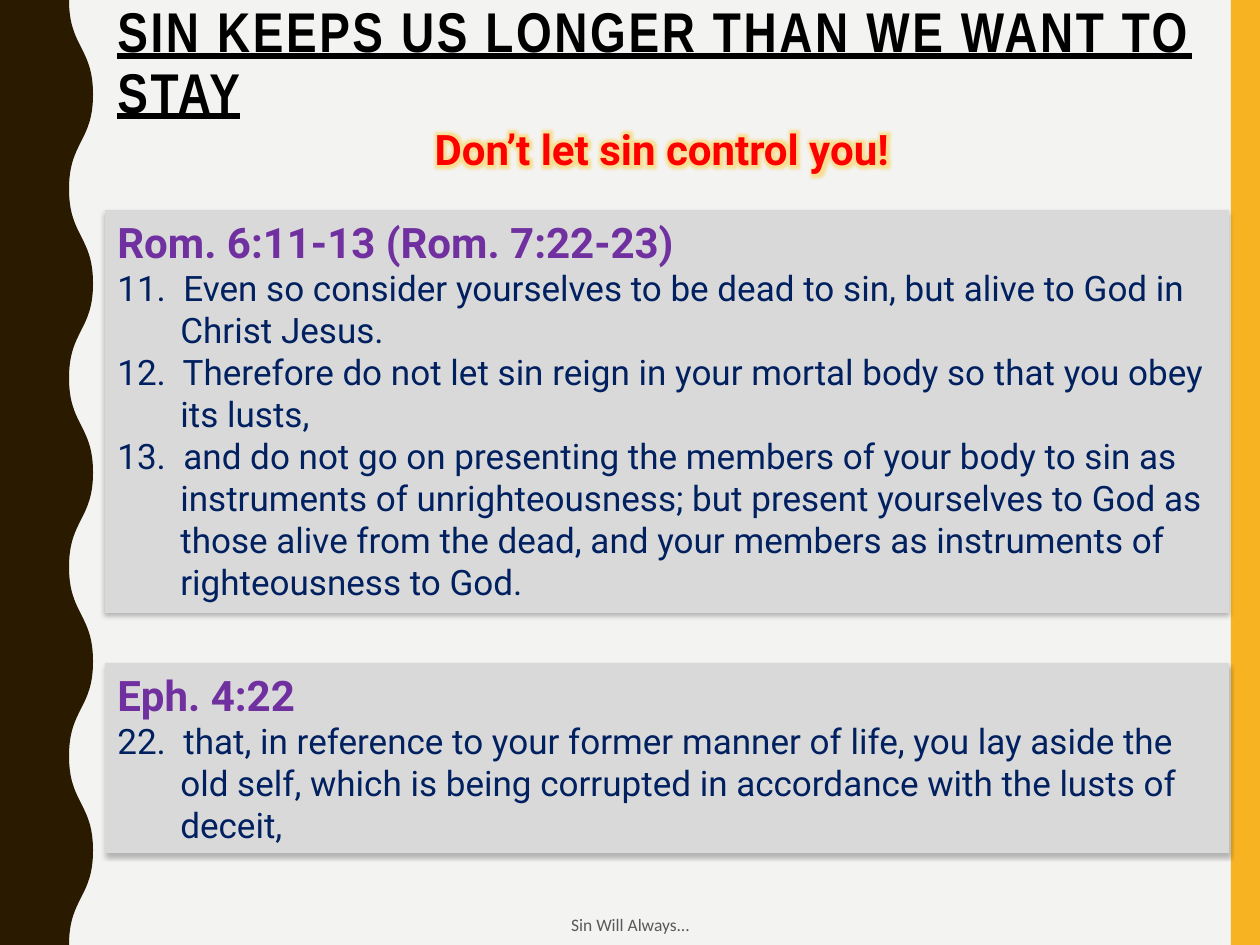
from lxml import etree
from pptx import Presentation
from pptx.dml.color import RGBColor
from pptx.enum.shapes import MSO_SHAPE
from pptx.enum.text import MSO_ANCHOR, MSO_AUTO_SIZE, PP_ALIGN
from pptx.oxml.ns import qn
from pptx.util import Emu, Pt

RECTANGLE = MSO_SHAPE.RECTANGLE
TOP, MIDDLE = MSO_ANCHOR.TOP, MSO_ANCHOR.MIDDLE
LEFT, CENTER = PP_ALIGN.LEFT, PP_ALIGN.CENTER
GROW = MSO_AUTO_SIZE.SHAPE_TO_FIT_TEXT

# Content
TITLE = "SIN KEEPS US LONGER THAN WE WANT TO STAY"
SUBTITLE = "Don’t let sin control you! "
FOOTER = "Sin Will Always..."
PASSAGES = [  # top, height, reference, verses
    (210, 403, "Rom. 6:11-13 (Rom. 7:22-23)", [
        "11.  Even so consider yourselves to be dead to sin, but alive to God in "
        "Christ Jesus.",
        "12.  Therefore do not let sin reign in your mortal body so that you obey "
        "its lusts,",
        "13.  and do not go on presenting the members of your body to sin as "
        "instruments of unrighteousness; but present yourselves to God as "
        "those alive from the dead, and your members as instruments of "
        "righteousness to God.",
    ]),
    (663, 190, "Eph. 4:22", [
        "22.  that, in reference to your former manner of life, you lay aside the "
        "old self, which is being corrupted in accordance with the lusts of "
        "deceit,",
    ]),
]

COLORS = {
    "background": "F3F3F2", "stripe": "F8B323", "wave": "2A1A00",
    "title": "000000", "warning": "FF0000", "glow": "FFC000",
    "panel": "D9D9D9", "reference": "7030A0", "verse": "002060",
    "footer": "595959", "shadow": "000000",
}

# Layout in px
WIDTH, HEIGHT = 1260, 945
BODY_LEFT, BODY_WIDTH = 105, 1124
HANGING = 63
STRIPE_WIDTH = 29
TROUGH, CREST = 69, 93
HALF_WAVES = 10


def px(value):
    return Emu(round(value * 914400 / 126))


def color(name):
    return RGBColor.from_string(COLORS[name])


def add_effect(effects, kind, color_name, alpha, **attributes):
    effect = etree.SubElement(effects, qn("a:" + kind),
                              {key: str(value) for key, value in attributes.items()})
    rgb = etree.SubElement(effect, qn("a:srgbClr"), val=COLORS[color_name])
    etree.SubElement(rgb, qn("a:alpha"), val=str(alpha * 1000))


def paint(shape, name):
    shape.shadow.inherit = False
    shape.fill.solid()
    shape.fill.fore_color.rgb = color(name)
    shape.line.fill.background()


def write(shape, lines, align=LEFT, anchor=TOP, hanging=0, grow=False):
    """Fill a shape with (text, font, size, color name, bold) lines."""
    frame = shape.text_frame
    frame.word_wrap = True
    frame.vertical_anchor = anchor
    if grow:
        frame.auto_size = GROW
    frame.text = "\n".join(line[0] for line in lines)
    for paragraph, (_, name, size, color_name, bold) in zip(frame.paragraphs, lines):
        paragraph.alignment = align
        if hanging:
            properties = paragraph._p.get_or_add_pPr()
            properties.set("marL", str(px(hanging)))
            properties.set("indent", str(-px(hanging)))
        font = paragraph.runs[0].font
        font.name, font.size, font.bold = name, Pt(size), bold
        font.color.rgb = color(color_name)
    return frame.paragraphs[0]


def add_text(slide, box, line, **options):
    shape = slide.shapes.add_textbox(*map(px, box))
    return write(shape, [line], **options)


def add_segment(path, kind, *points):
    segment = etree.SubElement(path, qn("a:" + kind))
    for x, y in points:
        etree.SubElement(segment, qn("a:pt"), x=str(px(x)), y=str(px(y)))


def add_wave(slide):
    """Build the left band, then bend its right edge into S-curves."""
    builder = slide.shapes.build_freeform(0, 0, scale=1.0)
    corners = [(CREST, 0), (CREST, HEIGHT), (0, HEIGHT)]
    builder.add_line_segments([(px(x), px(y)) for x, y in corners], close=True)
    wave = builder.convert_to_shape()
    path = next(wave._element.iter(qn("a:path")))
    for segment in list(path):
        path.remove(segment)
    length = HEIGHT / HALF_WAVES
    add_segment(path, "moveTo", (TROUGH, 0))
    for half in range(HALF_WAVES):
        start, end = (TROUGH, CREST) if half % 2 == 0 else (CREST, TROUGH)
        middle = (half + 0.5) * length
        add_segment(path, "cubicBezTo", (start, middle), (end, middle),
                    (end, (half + 1) * length))
    add_segment(path, "lnTo", (0, HEIGHT))
    add_segment(path, "lnTo", (0, 0))
    add_segment(path, "close")
    paint(wave, "wave")


presentation = Presentation()
presentation.slide_width, presentation.slide_height = px(WIDTH), px(HEIGHT)
slide = presentation.slides.add_slide(presentation.slide_layouts[6])
slide.background.fill.solid()
slide.background.fill.fore_color.rgb = color("background")

# Side decoration
stripe = slide.shapes.add_shape(
    RECTANGLE, px(WIDTH - STRIPE_WIDTH), 0, px(STRIPE_WIDTH), px(HEIGHT))
paint(stripe, "stripe")
add_wave(slide)

# Title, footer and warning
title = add_text(slide, (BODY_LEFT, -2, BODY_WIDTH, 84),
                 (TITLE, "Arial Narrow", 32, "title", True))
title.line_spacing = 0.9
title.runs[0].font.underline = True
title.runs[0].font._element.set("spc", "150")
add_text(slide, (431, 903, 399, 42), (FOOTER, "Calibri", 10, "footer", False),
         align=CENTER, anchor=MIDDLE)
warning = add_text(slide, (BODY_LEFT, 117, BODY_WIDTH, 64),
                   (SUBTITLE, "Roboto", 24, "warning", True),
                   align=CENTER, hanging=HANGING, grow=True)
glow_effects = etree.Element(qn("a:effectLst"))
warning.runs[0].font._element.find(qn("a:solidFill")).addnext(glow_effects)
add_effect(glow_effects, "glow", "glow", 40, rad=Pt(11))

# Scripture panels
for top, height, reference, verses in PASSAGES:
    panel = slide.shapes.add_shape(
        RECTANGLE, px(BODY_LEFT), px(top), px(BODY_WIDTH), px(height))
    paint(panel, "panel")
    add_effect(panel._element.spPr.find(qn("a:effectLst")), "outerShdw", "shadow",
               25, blurRad=Pt(3), dist=Pt(2), dir=90 * 60000)
    lines = [(reference, "Roboto", 24, "reference", True)]
    lines += [(verse, "Roboto", 20, "verse", False) for verse in verses]
    write(panel, lines, hanging=HANGING, grow=True)

presentation.save("out.pptx")
